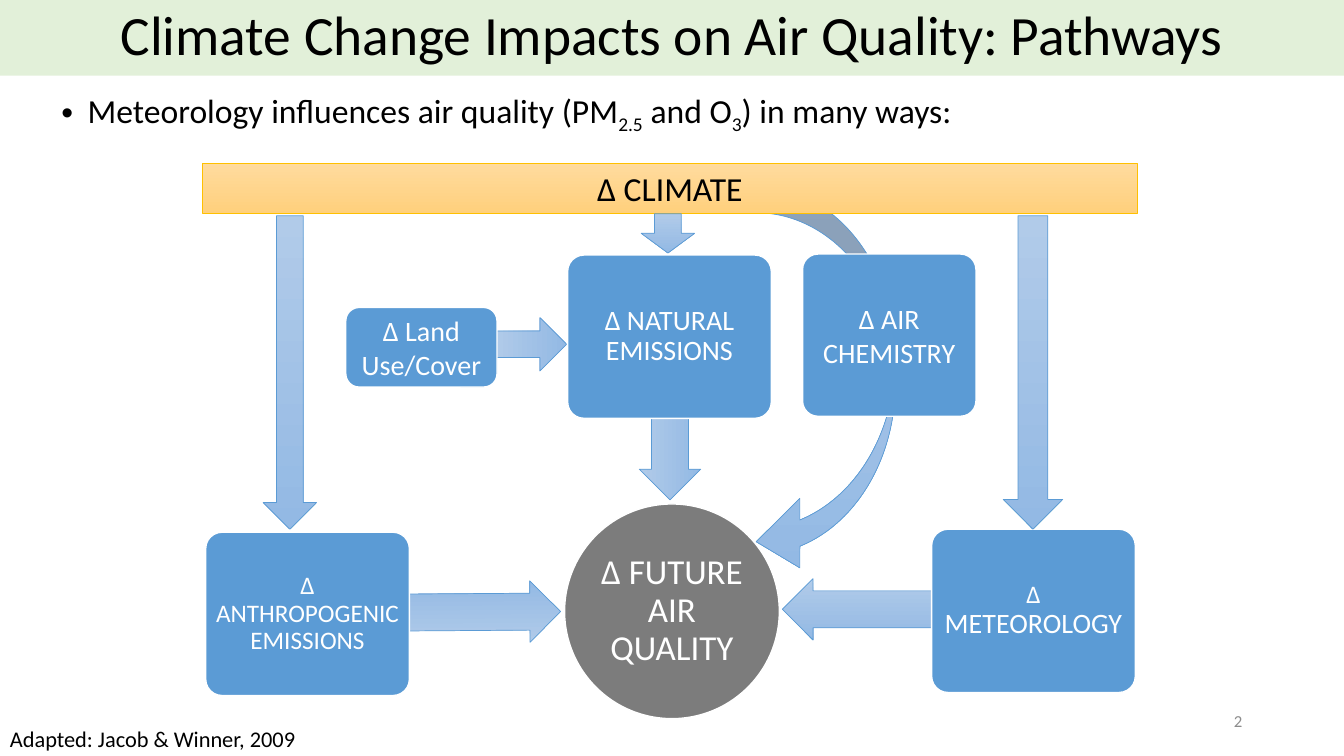
from dataclasses import dataclass

from lxml.etree import SubElement
from pptx import Presentation
from pptx.dml.color import RGBColor
from pptx.enum.shapes import MSO_SHAPE as Preset
from pptx.enum.text import MSO_ANCHOR as Anchor, MSO_AUTO_SIZE as AutoSize, PP_ALIGN as Align
from pptx.oxml.ns import qn
from pptx.util import Pt

EMU_PER_PX = 9144  # 100 px to the inch


@dataclass(frozen=True)
class Theme:
    font: str = "Calibri"
    black: str = "000000"
    white: str = "FFFFFF"
    number_gray: str = "8C8C8C"
    title_band: str = "E2F0D9"
    blue: str = "5B9BD5"
    gray: str = "7C7C7C"
    gold: str = "FFC000"
    arrow_fill: tuple = ("B1CBE9", "93B9E4")
    climate_fill: tuple = ("FFDB9E", "FFD07C")
    title_size: float = 39.6
    goal_size: int = 25
    lead_size: int = 24
    box_size: int = 20
    small_box_size: int = 18
    credit_size: int = 16
    number_size: int = 12
    box_line: float = 1
    thin_line: float = 0.5


THEME = Theme()


def px(length):
    return length * EMU_PER_PX


def rgb(color):
    return RGBColor.from_string(color)


def place(shape, at):
    shape.left, shape.top, shape.width, shape.height = map(px, at)


def paint(shape, fill, line, line_width):
    """Fill with one colour, or with a (top, bottom) pair as a gradient."""
    shape.shadow.inherit = False
    if isinstance(fill, tuple):
        shape.fill.gradient()
        shape.fill.gradient_angle = 270
        for stop, color in zip(shape.fill.gradient_stops, fill):
            stop.color.rgb = rgb(color)
    else:
        shape.fill.solid()
        shape.fill.fore_color.rgb = rgb(fill)
    shape.line.color.rgb = rgb(line)
    shape.line.width = Pt(line_width)


def format_paragraph(paragraph, size, color, align, line_spacing=1.0):
    paragraph.alignment = align
    paragraph.line_spacing = line_spacing
    font = paragraph.font
    font.name, font.size = THEME.font, Pt(size)
    font.color.rgb = rgb(color)


def write(shape, text, size, color, align=Align.CENTER, line_spacing=1.0,
          anchor=Anchor.MIDDLE, inset=None):
    frame = shape.text_frame
    frame.word_wrap = True
    frame.vertical_anchor = anchor
    if inset is not None:
        frame.margin_left = frame.margin_right = px(inset)
        frame.margin_top = frame.margin_bottom = px(inset)
    paragraph = frame.paragraphs[0]
    paragraph.text = text
    format_paragraph(paragraph, size, color, align, line_spacing)
    return paragraph


def add_block(slide, preset, at, fill, line, line_width, adjustments=()):
    shape = slide.shapes.add_shape(preset, *map(px, at))
    for index, value in enumerate(adjustments):
        shape.adjustments[index] = value
    paint(shape, fill, line, line_width)
    return shape


def add_arrow(slide, preset, at, rotation=0, adjustments=()):
    arrow = add_block(slide, preset, at, THEME.arrow_fill, THEME.blue,
                      THEME.thin_line, adjustments)
    arrow.rotation = rotation


def add_box(slide, at, text, size, corner=0.1, line_spacing=0.9, inset=4):
    box = add_block(slide, Preset.ROUNDED_RECTANGLE, at, THEME.blue, THEME.white,
                    THEME.box_line, (corner,))
    return write(box, text, size, THEME.white, line_spacing=line_spacing, inset=inset)


def add_label(slide, at, text, size, color, align, anchor):
    label = slide.shapes.add_textbox(*map(px, at))
    write(label, text, size, color, align, anchor=anchor)


def fill_title(slide):
    title = slide.shapes.title
    place(title, (0, 0, 1333, 75))
    title.fill.solid()
    title.fill.fore_color.rgb = rgb(THEME.title_band)
    title.text_frame.auto_size = AutoSize.NONE
    write(title, "Climate Change Impacts on Air Quality: Pathways",
          THEME.title_size, THEME.black, line_spacing=0.9)


def fill_lead(slide):
    body = slide.placeholders[1]
    place(body, (51, 84, 910, 50))
    frame = body.text_frame
    frame.word_wrap = False
    frame.auto_size = AutoSize.NONE
    paragraph = frame.paragraphs[0]
    properties = paragraph._p.get_or_add_pPr()
    properties.set("marL", str(px(26)))
    properties.set("indent", str(px(-26)))
    SubElement(properties, qn("a:buChar")).set("char", "•")
    paragraph.space_before = Pt(0)
    pieces = ("Meteorology influences air quality (PM", "2.5", " and O", "3",
              ") in many ways:")
    for index, piece in enumerate(pieces):
        run = paragraph.add_run()
        run.text = piece
        if index % 2:
            run._r.get_or_add_rPr().set("baseline", "-25000")
    format_paragraph(paragraph, THEME.lead_size, THEME.black, Align.LEFT)


def add_emission_paths(slide):
    """Arrows into the goal circle, each partly under the box it leaves."""
    block_arrow = (0.6, 0.5)
    goal = add_block(slide, Preset.OVAL, (560, 500, 213, 213), THEME.gray,
                     THEME.white, THEME.box_line)
    write(goal, "Δ FUTURE AIR QUALITY", THEME.goal_size, THEME.white,
          line_spacing=0.9, inset=2)
    add_arrow(slide, Preset.LEFT_ARROW, (295, 577, 261, 61), 179.6, block_arrow)
    add_box(slide, (204, 528, 202, 162), "Δ ANTHROPOGENIC EMISSIONS",
            THEME.small_box_size)
    add_arrow(slide, Preset.LEFT_ARROW, (586, 387, 157, 61), 270, block_arrow)
    add_box(slide, (563, 253, 202, 162), "Δ NATURAL EMISSIONS", THEME.box_size)
    add_arrow(slide, Preset.LEFT_ARROW, (776, 574, 256, 61), 0, block_arrow)
    meteorology = add_box(slide, (924, 525, 202, 162), "Δ ", THEME.box_size)
    meteorology.runs[0].font.size = Pt(THEME.small_box_size)
    meteorology.add_run().text = "METEOROLOGY"


def add_climate_paths(slide):
    climate = add_block(slide, Preset.RECTANGLE, (201, 162, 927, 50),
                        THEME.climate_fill, THEME.gold, THEME.thin_line)
    write(climate, "Δ CLIMATE", THEME.lead_size, THEME.black, anchor=Anchor.TOP)
    add_box(slide, (343, 305, 150, 79), "Δ Land Use/Cover", THEME.box_size,
            corner=0.167, line_spacing=1.0, inset=None)
    for at in ((636, 212, 53, 39), (995, 214, 59, 311), (261, 214, 53, 311)):
        add_arrow(slide, Preset.DOWN_ARROW, at)
    add_box(slide, (796, 252, 172, 161), "Δ AIR CHEMISTRY", THEME.box_size,
            corner=0.095, line_spacing=1.0, inset=None)


def main():
    presentation = Presentation()
    presentation.slide_width, presentation.slide_height = px(1333), px(750)
    slide = presentation.slides.add_slide(presentation.slide_layouts[1])
    fill_title(slide)
    fill_lead(slide)
    add_arrow(slide, Preset.DOWN_ARROW, (499, 305, 53, 73), 270)
    add_arrow(slide, Preset.CURVED_LEFT_ARROW, (750, 185, 138, 387),
              adjustments=(0.189, 0.5, 0.314))
    add_emission_paths(slide)
    add_climate_paths(slide)
    add_label(slide, (942, 695, 300, 40), "2", THEME.number_size,
              THEME.number_gray, Align.RIGHT, Anchor.MIDDLE)
    add_label(slide, (0, 714, 368, 37), "Adapted: Jacob & Winner, 2009",
              THEME.credit_size, THEME.black, Align.LEFT, Anchor.TOP)
    presentation.save("out.pptx")


if __name__ == "__main__":
    main()
